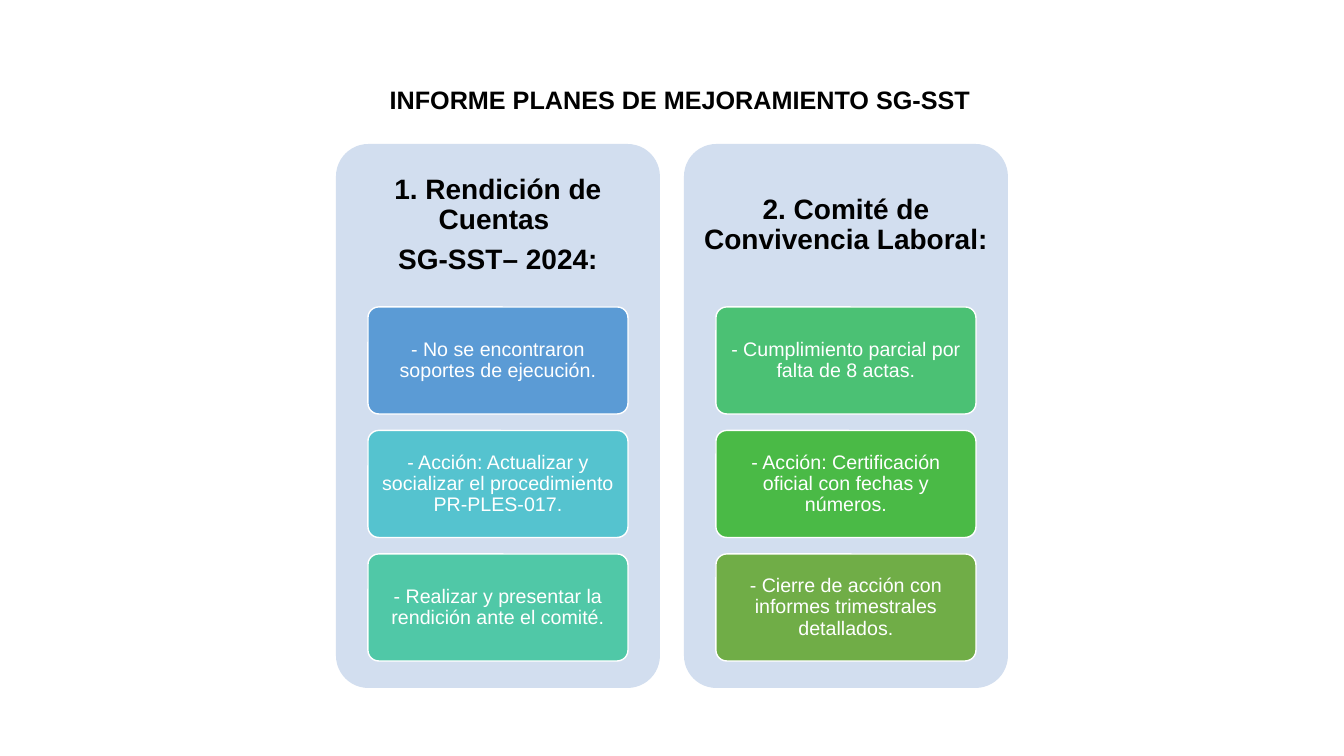
from pptx import Presentation, util as u
from pptx.dml.color import RGBColor
from pptx.enum import shapes, text

PX = u.Inches(1) / 100.8
FONT = "Arial"
BLACK = RGBColor(0x00, 0x00, 0x00)
WHITE = RGBColor(0xFF, 0xFF, 0xFF)
PANEL = RGBColor(0xD2, 0xDE, 0xEF)
BLUE = RGBColor(0x5B, 0x9B, 0xD5)
CYAN = RGBColor(0x55, 0xC3, 0xCF)
TEAL = RGBColor(0x50, 0xC8, 0xA7)
MINT = RGBColor(0x4B, 0xC1, 0x74)
GREEN = RGBColor(0x4A, 0xBA, 0x46)
OLIVE = RGBColor(0x70, 0xAD, 0x47)

HEADING_HEIGHT = 163
CARD_INDENT, CARD_HEIGHT, CARD_GAP = 32, 107, 16.5

PLANS = [
    (["1. Rendición de Cuentas ", "SG-SST– 2024:"], [
        ("- No se encontraron soportes de ejecución.", BLUE),
        ("- Acción: Actualizar y socializar el procedimiento PR-PLES-017.", CYAN),
        ("- Realizar y presentar la rendición ante el comité.", TEAL),
    ]),
    (["2. Comité de Convivencia Laboral:"], [
        ("- Cumplimiento parcial por falta de 8 actas.", MINT),
        ("- Acción: Certificación oficial con fechas y números.", GREEN),
        ("- Cierre de acción con informes trimestrales detallados.", OLIVE),
    ]),
]


def emu(*lengths):
    """Turn px lengths into EMU."""
    return [u.Emu(round(length * PX)) for length in lengths]


def write(shape, lines, size, color, bold=False, margins=(8, 8), spacing=0.9):
    """Fill a shape with centred lines; margins are horizontal and vertical px."""
    frame = shape.text_frame
    frame.word_wrap = True
    frame.auto_size = text.MSO_AUTO_SIZE.NONE
    frame.vertical_anchor = text.MSO_ANCHOR.MIDDLE
    frame.margin_left, frame.margin_top = emu(*margins)
    frame.margin_right, frame.margin_bottom = emu(*margins)
    for index, line in enumerate(lines):
        paragraph = frame.paragraphs[0] if index == 0 else frame.add_paragraph()
        paragraph.alignment = text.PP_ALIGN.CENTER
        paragraph.line_spacing = spacing
        paragraph.space_before = u.Pt(0)
        paragraph.space_after = u.Pt(size * 0.35)
        run = paragraph.add_run()
        run.text = line
        run.font.name, run.font.size, run.font.bold = FONT, u.Pt(size), bold
        run.font.color.rgb = color


def add_rounded(slide, box, fill):
    rounded = slide.shapes.add_shape(shapes.MSO_SHAPE.ROUNDED_RECTANGLE, *emu(*box))
    rounded.adjustments[0] = 0.1
    rounded.shadow.inherit = False
    rounded.fill.solid()
    rounded.fill.fore_color.rgb = fill
    rounded.line.fill.background()
    return rounded


def add_title(slide, box):
    title = slide.shapes.title
    title.left, title.top, title.width, title.height = emu(*box)
    write(title, ["INFORME PLANES DE MEJORAMIENTO SG-SST"], 18, BLACK, True, (10, 5), 1.0)


def add_plan(slide, box, heading_lines, cards):
    """Place a panel with its heading and a stack of action cards."""
    left, top, width, _ = box
    add_rounded(slide, box, PANEL)
    heading = slide.shapes.add_textbox(*emu(left, top, width, HEADING_HEIGHT))
    write(heading, heading_lines, 20, BLACK, True)
    for row, (action, fill) in enumerate(cards):
        card_top = top + HEADING_HEIGHT + row * (CARD_HEIGHT + CARD_GAP)
        card = add_rounded(
            slide, (left + CARD_INDENT, card_top, width - 2 * CARD_INDENT, CARD_HEIGHT), fill)
        card.line.color.rgb = WHITE
        card.line.width = u.Pt(1)
        write(card, [action], 14, WHITE, margins=(7, 6))


def main():
    deck = Presentation()
    deck.slide_width, deck.slide_height = emu(1344, 756)
    slide = deck.slides.add_slide(deck.slide_layouts[5])
    add_title(slide, (344, 79, 672, 40))
    for column, (heading_lines, cards) in enumerate(PLANS):
        add_plan(slide, (336 + column * 348, 144, 324, 544), heading_lines, cards)
    deck.save("out.pptx")


if __name__ == "__main__":
    main()
